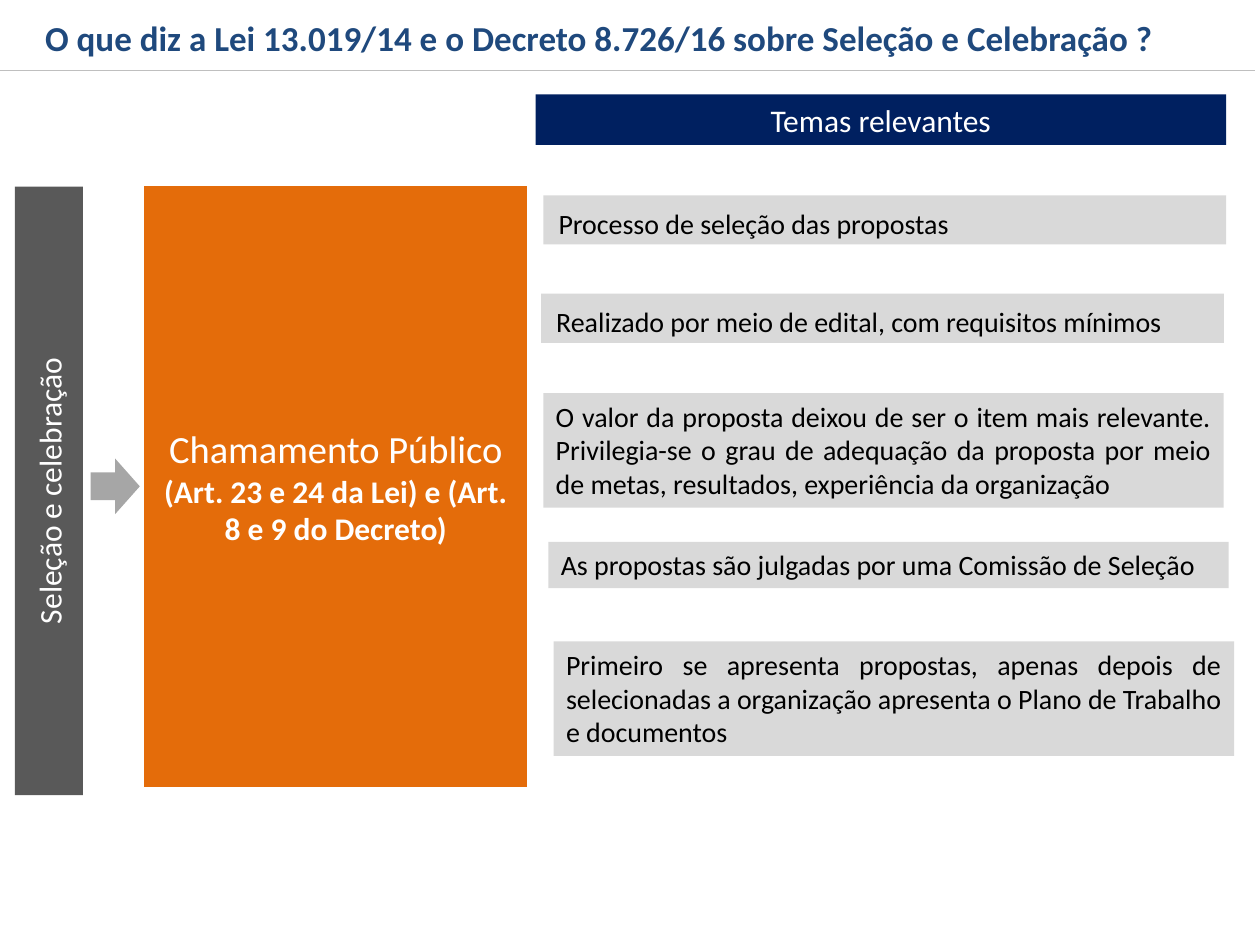
"""Builds the slide on the selection and celebration stage of the law."""
import pptx
import pptx.dml.color
import pptx.enum.shapes
import pptx.enum.text
import pptx.oxml.ns
import pptx.util
from lxml import etree

Pt = pptx.util.Pt
RGBColor = pptx.dml.color.RGBColor
Shape = pptx.enum.shapes.MSO_SHAPE
Align = pptx.enum.text.PP_ALIGN
Anchor = pptx.enum.text.MSO_ANCHOR

FONT = "Calibri"
WHITE = RGBColor(0xFF, 0xFF, 0xFF)
BLACK = RGBColor(0x00, 0x00, 0x00)
TITLE_BLUE = RGBColor(0x1F, 0x49, 0x7D)
NAVY = RGBColor(0x00, 0x20, 0x60)
ORANGE = RGBColor(0xE4, 0x6C, 0x0A)
DARK_GRAY = RGBColor(0x59, 0x59, 0x59)
ARROW_GRAY = RGBColor(0xA6, 0xA6, 0xA6)
RULE_GRAY = RGBColor(0xBF, 0xBF, 0xBF)
PALE_GRAY = RGBColor(0xD9, 0xD9, 0xD9)

SPACED = {"spacing": 1.15, "indent": 1.44}
TOPICS = [
    ((310.5, 111.6, 390.2, 28.1), "Processo de seleção das propostas", SPACED),
    ((309.2, 167.8, 390.2, 28.1), "Realizado por meio de edital, com requisitos mínimos", SPACED),
    ((310.5, 224.6, 388.8, 65.5), "O valor da proposta deixou de ser o item mais relevante. "
     "Privilegia-se o grau de adequação da proposta por meio de metas, resultados, "
     "experiência da organização", {}),
    ((313.4, 309.6, 388.8, 26.6), "As propostas são julgadas por uma Comissão de Seleção", {}),
    ((316.4, 366.5, 388.8, 65.5), "Primeiro se apresenta propostas, apenas depois de "
     "selecionadas a organização apresenta o Plano de Trabalho e documentos", {}),
]


def write(box, text, size=18, color=WHITE, bold=False, align=Align.CENTER,
          anchor=Anchor.MIDDLE, spacing=None, indent=0, wrap=True, first=True):
    """Write one formatted paragraph into a box."""
    frame = box.text_frame
    frame.word_wrap = wrap
    frame.vertical_anchor = anchor
    frame.margin_left = Pt(7.2 + indent)
    para = frame.paragraphs[0] if first else frame.add_paragraph()
    para.alignment = align
    if spacing:
        para.line_spacing = spacing
    span = para.add_run()
    span.text = text
    span.font.name = FONT
    span.font.size = Pt(size)
    span.font.bold = bold
    span.font.color.rgb = color


def add_block(page, bounds, fill, outline=None, kind=Shape.RECTANGLE):
    """Add a flat filled shape and return it."""
    box = page.shapes.add_shape(kind, *map(Pt, bounds))
    box.shadow.inherit = False
    box.fill.solid()
    box.fill.fore_color.rgb = fill
    if outline is None:
        box.line.fill.background()
    else:
        box.line.color.rgb = outline
        box.line.width = Pt(0.75)
    return box


def add_rule(page, left, right, top):
    """Add the thin horizontal line under the title."""
    rule = page.shapes.add_connector(
        pptx.enum.shapes.MSO_CONNECTOR.STRAIGHT, Pt(left), Pt(top), Pt(right), Pt(top))
    rule.line.color.rgb = RULE_GRAY
    rule.line.width = Pt(0.75)
    etree.SubElement(rule._element.spPr, pptx.oxml.ns.qn("a:effectLst"))


def add_title(page):
    """Add the slide title."""
    box = page.shapes.add_textbox(Pt(18.7), Pt(5.8), Pt(657.4), Pt(31.7))
    write(box, "O que diz a Lei 13.019/14 e o Decreto 8.726/16 sobre Seleção e Celebração ?",
          size=20, color=TITLE_BLUE, bold=True, align=Align.LEFT, anchor=Anchor.TOP, wrap=False)


def add_stage(page):
    """Add the vertical stage label, its arrow and the public call block."""
    label = add_block(page, (8.6, 106.6, 38.9, 347.8), DARK_GRAY)
    write(label, "Seleção e celebração")
    label.text_frame._txBody.bodyPr.set("vert", "vert270")
    call = add_block(page, (82.1, 105.8, 219.6, 344.2), ORANGE, outline=WHITE)
    write(call, "Chamamento Público", size=22)
    write(call, "(Art. 23 e 24 da Lei) e (Art. 8 e 9 do Decreto)", bold=True, first=False)
    add_block(page, (51.8, 262.1, 28.1, 31.7), ARROW_GRAY, kind=Shape.RIGHT_ARROW)


def add_topics(page):
    """Add the topic heading and the topic boxes."""
    heading = add_block(page, (306, 54, 394.6, 28.8), NAVY)
    write(heading, "Temas relevantes")
    for bounds, text, options in TOPICS:
        box = add_block(page, bounds, PALE_GRAY)
        write(box, text, size=16, color=BLACK, align=Align.JUSTIFY, anchor=Anchor.TOP, **options)


def main():
    """Build and save the deck."""
    deck = pptx.Presentation()
    deck.slide_width, deck.slide_height = Pt(720), Pt(540)
    page = deck.slides.add_slide(deck.slide_layouts[6])
    add_rule(page, -2.9, 717.1, 40.3)
    add_title(page)
    add_stage(page)
    add_topics(page)
    deck.save("out.pptx")


if __name__ == "__main__":
    main()
